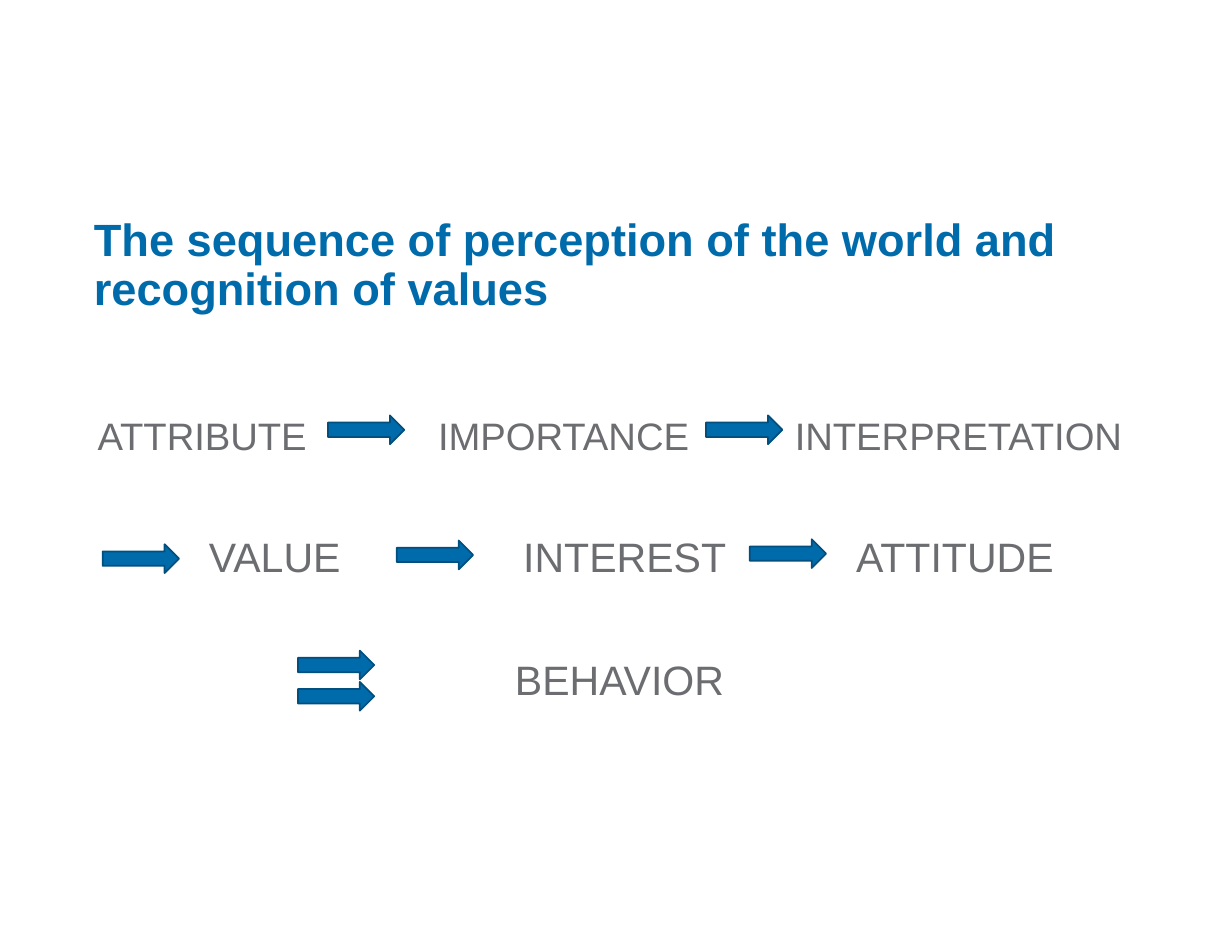
import lxml.etree
import pptx
import pptx.dml.color
import pptx.enum.shapes
import pptx.enum.text
import pptx.oxml.ns
import pptx.util
from pptx.util import Inches

BLUE = pptx.dml.color.RGBColor(0x00, 0x6B, 0xAB)
DARK_BLUE = pptx.dml.color.RGBColor(0x00, 0x4F, 0x7F)
GRAY = pptx.dml.color.RGBColor(0x6C, 0x6D, 0x70)
FONT = "Arial"
MM_PER_INCH = 25.4
LINE_SPACING = 0.9
ROW_GAP = 45
TITLE = "The sequence of perception of the world and recognition of values"

# Each row: text size, tab stops in inches, steps
TABBED_ROWS = [
    (22, [0.1, 2.82, 5.67], ["ATTRIBUTE", "IMPORTANCE", "INTERPRETATION"]),
    (23.6, [0.99, 3.5, 6.16], ["VALUE", "INTEREST", "ATTITUDE"]),
]
OUTCOME = "BEHAVIOR"
ARROW_POSITIONS = [
    (2.62, 3.32), (5.64, 3.32),
    (0.82, 4.35), (3.17, 4.32), (5.99, 4.31),
    (2.38, 5.2), (2.38, 5.45),
]


def add_text_frame(slide, left, top, width, height):
    shape = slide.shapes.add_textbox(
        Inches(left), Inches(top), Inches(width), Inches(height))
    frame = shape.text_frame
    frame.margin_left = frame.margin_right = 0
    frame.margin_top = frame.margin_bottom = 0
    frame.word_wrap = True
    return frame


def add_run(paragraph, text, size, color, bold=False):
    paragraph.line_spacing = LINE_SPACING
    run = paragraph.add_run()
    run.text = text
    run.font.name = FONT
    run.font.size = pptx.util.Pt(size)
    run.font.bold = bold
    run.font.color.rgb = color


def set_tab_stops(paragraph, stops):
    properties = paragraph._p.get_or_add_pPr()
    tab_list = lxml.etree.SubElement(
        properties, pptx.oxml.ns.qn("a:tabLst"))
    for stop in stops:
        tab = lxml.etree.SubElement(tab_list, pptx.oxml.ns.qn("a:tab"))
        tab.set("pos", str(Inches(stop)))
        tab.set("algn", "l")


def add_title(slide):
    frame = add_text_frame(slide, 0.75, 1.74, 8.27, 0.89)
    add_run(frame.paragraphs[0], TITLE, 26, BLUE, bold=True)


def add_sequence(slide):
    """Add the rows of steps, each step at its tab stop, and the outcome."""
    frame = add_text_frame(slide, 0.68, 3.34, 8.54, 3.05)
    for index, (size, stops, steps) in enumerate(TABBED_ROWS):
        paragraph = frame.add_paragraph() if index else frame.paragraphs[0]
        set_tab_stops(paragraph, stops)
        if index:
            paragraph.space_before = pptx.util.Pt(ROW_GAP)
        for step in steps:
            add_run(paragraph, "\t" + step, size, GRAY)

    paragraph = frame.add_paragraph()
    paragraph.alignment = pptx.enum.text.PP_ALIGN.CENTER
    paragraph.space_before = pptx.util.Pt(ROW_GAP)
    add_run(paragraph, OUTCOME, 23.6, GRAY)


def add_arrow(slide, left, top):
    shape = slide.shapes.add_shape(
        pptx.enum.shapes.MSO_SHAPE.RIGHT_ARROW,
        Inches(left), Inches(top), Inches(0.61), Inches(0.23))
    shape.shadow.inherit = False
    shape.fill.solid()
    shape.fill.fore_color.rgb = BLUE
    shape.line.color.rgb = DARK_BLUE
    shape.line.width = pptx.util.Pt(1)


def main():
    presentation = pptx.Presentation()
    presentation.slide_width = Inches(250 / MM_PER_INCH)
    presentation.slide_height = Inches(190 / MM_PER_INCH)
    slide = presentation.slides.add_slide(presentation.slide_layouts[6])

    add_title(slide)
    add_sequence(slide)
    for left, top in ARROW_POSITIONS:
        add_arrow(slide, left, top)

    presentation.save("out.pptx")


if __name__ == "__main__":
    main()
